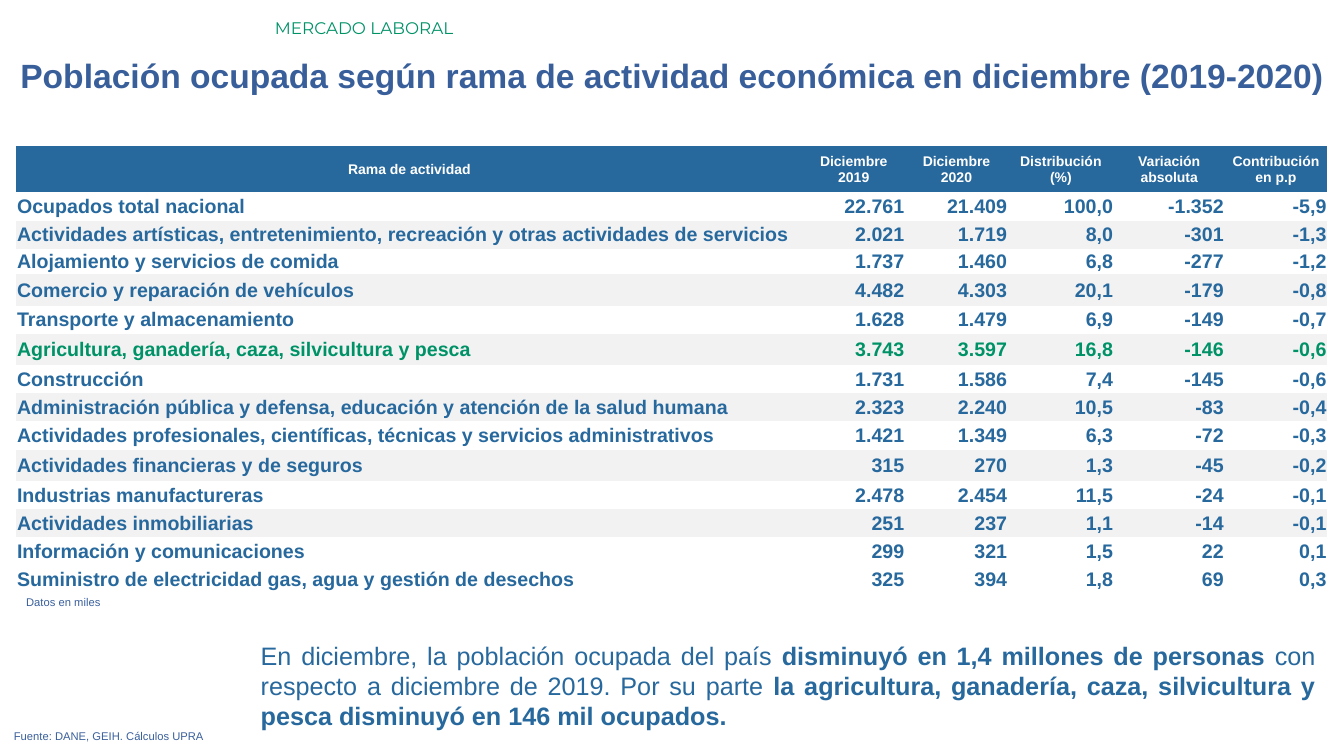
"""Build the slide on employed population by branch of activity."""
from pptx import Presentation
from pptx.dml.color import RGBColor
from pptx.enum.text import MSO_ANCHOR as Anchor, MSO_AUTO_SIZE as AutoSize, PP_ALIGN as Align
from pptx.util import Cm, Pt

COLORS = {"green": "009267", "title": "395F9B", "blue": "27689D",
          "white": "FFFFFF", "stripe": "F2F2F2"}

SECTION = "MERCADO LABORAL"
TITLE = "Población ocupada según rama de actividad económica en diciembre (2019-2020)"
MESSAGE = ("En diciembre, la población ocupada del país "
           "**disminuyó en 1,4 millones de personas **"
           "con respecto a diciembre de 2019. Por su parte "
           "**la agricultura, ganadería, caza, silvicultura y pesca "
           "disminuyó en 146 mil ocupados.**")
UNITS = "Datos en miles"
SOURCE = "Fuente: DANE, GEIH. Cálculos UPRA"

HEADINGS = ("Rama de actividad", "Diciembre\n2019", "Diciembre\n2020",
            "Distribución\n(%)", "Variación\nabsoluta", "Contribución\nen p.p")
HIGHLIGHT = "Agricultura, ganadería, caza, silvicultura y pesca"
BRANCHES = [
    ("Ocupados total nacional", "22.761", "21.409", "100,0", "-1.352", "-5,9"),
    ("Actividades artísticas, entretenimiento, recreación y otras actividades de servicios",
     "2.021", "1.719", "8,0", "-301", "-1,3"),
    ("Alojamiento y servicios de comida", "1.737", "1.460", "6,8", "-277", "-1,2"),
    ("Comercio y reparación de vehículos", "4.482", "4.303", "20,1", "-179", "-0,8"),
    ("Transporte y almacenamiento", "1.628", "1.479", "6,9", "-149", "-0,7"),
    (HIGHLIGHT, "3.743", "3.597", "16,8", "-146", "-0,6"),
    ("Construcción", "1.731", "1.586", "7,4", "-145", "-0,6"),
    ("Administración pública y defensa, educación y atención de la salud humana",
     "2.323", "2.240", "10,5", "-83", "-0,4"),
    ("Actividades profesionales, científicas, técnicas y servicios administrativos",
     "1.421", "1.349", "6,3", "-72", "-0,3"),
    ("Actividades financieras y de seguros", "315", "270", "1,3", "-45", "-0,2"),
    ("Industrias manufactureras", "2.478", "2.454", "11,5", "-24", "-0,1"),
    ("Actividades inmobiliarias", "251", "237", "1,1", "-14", "-0,1"),
    ("Información y comunicaciones", "299", "321", "1,5", "22", "0,1"),
    ("Suministro de electricidad gas, agua y gestión de desechos",
     "325", "394", "1,8", "69", "0,3"),
]
COLUMN_WIDTHS = (19.81, 2.59, 2.59, 2.67, 2.79, 2.59)
HEADING_HEIGHT, BRANCH_HEIGHT = 1.17, 0.71
SPECIAL_HEIGHTS = {3: 0.64, 4: 0.79, 6: 0.79, 10: 0.79}
NO_GRID_STYLE = "{2D5ABB26-0587-4C30-8999-92F81FD0307C}"


def write(frame, text, size=14, color="blue", bold=False, align=Align.LEFT, font="Arial"):
    """Fill a text frame; ** switches bold and a newline starts a paragraph."""
    for number, line in enumerate(text.split("\n")):
        paragraph = frame.add_paragraph() if number else frame.paragraphs[0]
        paragraph.alignment = align
        for part, words in enumerate(line.split("**")):
            if words:
                run = paragraph.add_run()
                run.text = words
                run.font.name, run.font.size = font, Pt(size)
                run.font.bold = bold or part % 2 == 1
                run.font.color.rgb = RGBColor.from_string(COLORS[color])


def add_text(slide, text, left, top, width, height, **style):
    """Place a wrapping text box."""
    frame = slide.shapes.add_textbox(Cm(left), Cm(top), Cm(width), Cm(height)).text_frame
    frame.word_wrap = True
    frame.auto_size = AutoSize.SHAPE_TO_FIT_TEXT
    write(frame, text, **style)


def fill_cell(cell, text, background, **style):
    """Write one table cell on its background."""
    cell.margin_left = cell.margin_right = cell.margin_top = Cm(0.02)
    cell.margin_bottom = 0
    cell.vertical_anchor = Anchor.MIDDLE
    if background:
        cell.fill.solid()
        cell.fill.fore_color.rgb = RGBColor.from_string(COLORS[background])
    else:
        cell.fill.background()
    write(cell.text_frame, text, bold=True, **style)


def add_branches(slide):
    """Build the table of branches."""
    heights = [HEADING_HEIGHT] + [SPECIAL_HEIGHTS.get(row, BRANCH_HEIGHT)
                                  for row in range(1, len(BRANCHES) + 1)]
    table = slide.shapes.add_table(len(heights), len(HEADINGS), Cm(0.41), Cm(3.68),
                                   Cm(sum(COLUMN_WIDTHS)), Cm(sum(heights))).table
    table.horz_banding = False
    table._tbl.tblPr[0].text = NO_GRID_STYLE
    for column, width in zip(table.columns, COLUMN_WIDTHS):
        column.width = Cm(width)
    for row, height in zip(table.rows, heights):
        row.height = Cm(height)
    for column, heading in enumerate(HEADINGS):
        fill_cell(table.cell(0, column), heading, "blue",
                  size=10, color="white", align=Align.CENTER)
    for row, branch in enumerate(BRANCHES, 1):
        striped = row % 2 == 0 and row < len(BRANCHES)
        for column, value in enumerate(branch):
            fill_cell(table.cell(row, column), value, "stripe" if striped else None,
                      color="green" if branch[0] == HIGHLIGHT else "blue",
                      align=Align.RIGHT if column else Align.LEFT)


def main():
    """Assemble and save the slide."""
    deck = Presentation()
    deck.slide_width, deck.slide_height = Cm(33.87), Cm(19.05)
    slide = deck.slides.add_slide(deck.slide_layouts[6])
    add_text(slide, SECTION, 6.68, 0.33, 27.18, 0.77, size=12, color="green", font="Montserrat")
    add_text(slide, TITLE, 0, 1.27, 33.87, 1.28, size=24, color="title",
             bold=True, align=Align.CENTER)
    add_text(slide, MESSAGE, 6.32, 16, 27.08, 2.57, size=18, align=Align.JUSTIFY)
    add_text(slide, SOURCE, 0.1, 18.26, 32.79, 0.6, size=8, color="title", align=Align.JUSTIFY)
    add_branches(slide)
    add_text(slide, UNITS, 0.41, 14.88, 32.79, 0.6, size=8, color="title", align=Align.JUSTIFY)
    deck.save("out.pptx")


if __name__ == "__main__":
    main()
